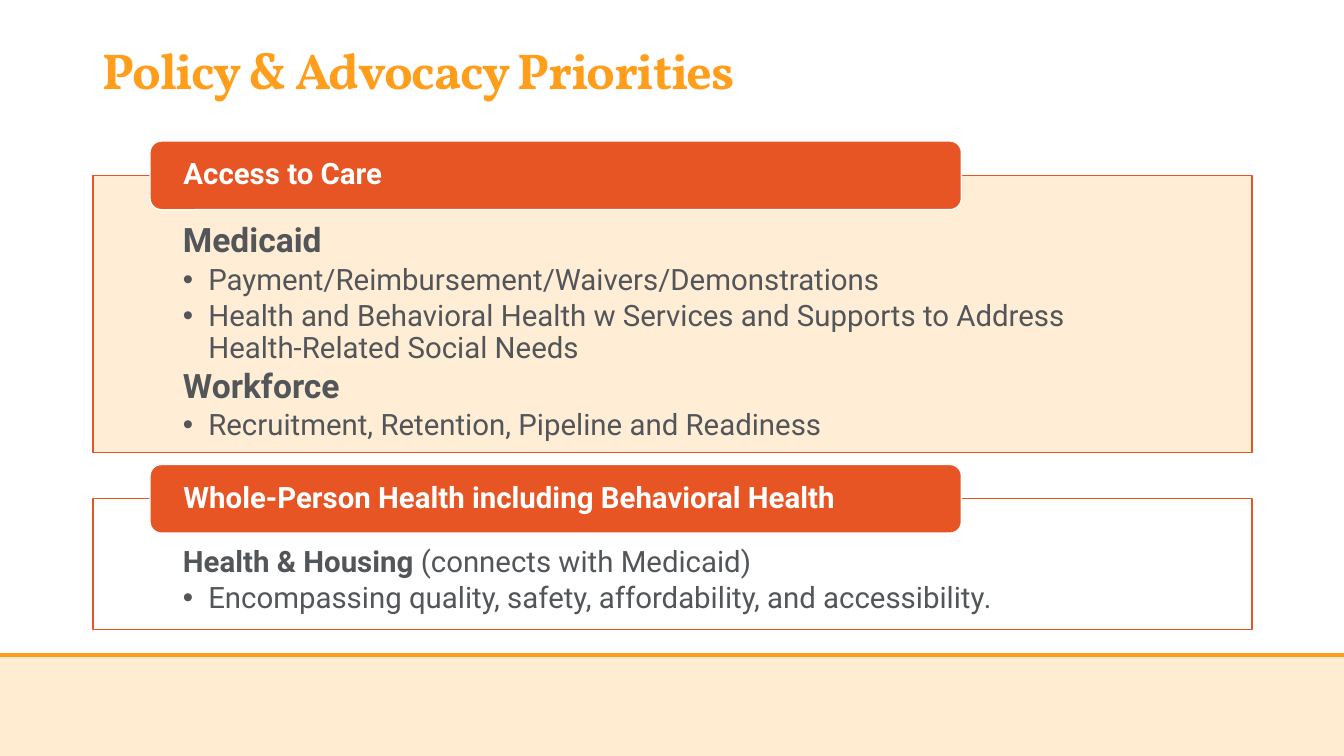
from dataclasses import dataclass

from lxml import etree
from pptx import Presentation
from pptx import util as u
from pptx.dml.color import RGBColor
from pptx.enum import shapes, text
from pptx.oxml.ns import qn

TITLE = "Policy & Advocacy Priorities"

# Each line: (level, [(text, bold, italic), ...])
PANELS = [
    {
        "heading": "Access to Care",
        "fill": "FFECD1",
        "height": 6.98,
        "lines": [
            ("head", [("Medicaid", True, False)]),
            ("bullet", [("Payment/Reimbursement/Waivers/Demonstrations", False, False)]),
            ("bullet", [("Health and Behavioral Health w Services and Supports to Address "
                         "Health-Related Social Needs", False, False)]),
            ("head", [("Workforce", True, False)]),
            ("bullet", [("Recruitment, Retention, Pipeline and Readiness", False, False)]),
        ],
    },
    {
        "heading": "Whole-Person Health including Behavioral Health",
        "fill": "FFFFFF",
        "height": 3.3,
        "lines": [
            ("plain", [("Health & Housing ", True, False),
                       ("(connects with Medicaid)", False, False)]),
            ("bullet", [("Encompassing quality, safety, affordability, and accessibility",
                         False, False), (".", False, True)]),
        ],
    },
]


@dataclass(frozen=True)
class Theme:
    amber: str = "FF9E1B"
    cream: str = "FFECD1"
    orange: str = "E75524"
    grey: str = "535659"
    white: str = "FFFFFF"
    title_font: str = "Vollkorn"
    body_font: str = "Roboto"
    title_size: int = 36
    head_size: int = 24
    body_size: int = 21


THEME = Theme()
SLIDE_WIDTH, SLIDE_HEIGHT = 33.87, 19.05
FOOTER_TOP = 16.51
PANEL_LEFT, PANEL_WIDTH, PANEL_TOP, PANEL_GAP = 2.34, 29.21, 4.42, 1.17
TAB_LEFT, TAB_WIDTH, TAB_HEIGHT = 3.78, 20.45, 1.73
TAB_RISE = TAB_HEIGHT / 2
HANGING_INDENT = 0.64


def add_text(paragraph, words, *, size, color, font=THEME.body_font, bold=False,
             italic=False, tracking=None):
    """Append a formatted run; tracking is in hundredths of a point."""
    run = paragraph.add_run()
    run.text = words
    run.font.name = font
    run.font.size = u.Pt(size)
    run.font.bold = bold
    run.font.italic = italic
    run.font.color.rgb = RGBColor.from_string(color)
    if tracking is not None:
        run.font._element.set("spc", str(tracking))


def add_box(slide, kind, left, top, width, height, fill, line=None, opacity=None):
    shape = slide.shapes.add_shape(kind, u.Cm(left), u.Cm(top), u.Cm(width), u.Cm(height))
    shape.shadow.inherit = False
    shape.fill.solid()
    shape.fill.fore_color.rgb = RGBColor.from_string(fill)
    if opacity:
        color = shape.fill._xPr.find(qn("a:solidFill"))[0]
        etree.SubElement(color, qn("a:alpha")).set("val", str(opacity * 1000))
    if line:
        shape.line.color.rgb = RGBColor.from_string(line)
        shape.line.width = u.Pt(1)
    else:
        shape.line.fill.background()
    return shape


def set_frame(shape, anchor, side, top=0, bottom=0):
    frame = shape.text_frame
    frame.word_wrap = True
    frame.vertical_anchor = anchor
    frame.margin_left = frame.margin_right = u.Cm(side)
    frame.margin_top, frame.margin_bottom = u.Cm(top), u.Cm(bottom)
    return frame


def set_paragraph(paragraph, bullet=False, space_after=0):
    if bullet:
        properties = paragraph._p.get_or_add_pPr()
        properties.set("marL", str(u.Cm(HANGING_INDENT)))
        properties.set("indent", str(-u.Cm(HANGING_INDENT)))
        etree.SubElement(properties, qn("a:buFont")).set("typeface", "Arial")
        etree.SubElement(properties, qn("a:buChar")).set("char", "•")
    paragraph.alignment = text.PP_ALIGN.LEFT
    paragraph.line_spacing = 0.9
    paragraph.space_after = u.Pt(space_after)


def add_footer(slide):
    add_box(slide, shapes.MSO_SHAPE.RECTANGLE, 0, FOOTER_TOP, SLIDE_WIDTH,
            SLIDE_HEIGHT - FOOTER_TOP, THEME.cream)
    rule = slide.shapes.add_connector(shapes.MSO_CONNECTOR.STRAIGHT, 0, u.Cm(FOOTER_TOP),
                                      u.Cm(SLIDE_WIDTH), u.Cm(FOOTER_TOP))
    rule.line.color.rgb = RGBColor.from_string(THEME.amber)
    rule.line.width = u.Pt(3)
    etree.SubElement(rule._element.spPr, qn("a:effectLst"))


def add_title(slide):
    title = slide.shapes.title
    title.left, title.top = u.Cm(PANEL_LEFT), 0
    title.width, title.height = u.Cm(PANEL_WIDTH), u.Cm(3.68)
    frame = set_frame(title, text.MSO_ANCHOR.MIDDLE, 0.25, 0.13, 0.13)
    frame.auto_size = text.MSO_AUTO_SIZE.NONE
    set_paragraph(frame.paragraphs[0])
    add_text(frame.paragraphs[0], TITLE, size=THEME.title_size, color=THEME.amber,
             font=THEME.title_font, bold=True, tracking=-90)


def add_panel(slide, panel, top):
    """Draw a bordered panel with its heading tab centred on the top edge."""
    body = add_box(slide, shapes.MSO_SHAPE.RECTANGLE, PANEL_LEFT, top, PANEL_WIDTH,
                   panel["height"], panel["fill"], THEME.orange, opacity=90)
    frame = set_frame(body, text.MSO_ANCHOR.TOP, 2.27, 1.22, 0.4)
    for index, (level, runs) in enumerate(panel["lines"]):
        paragraph = frame.add_paragraph() if index else frame.paragraphs[0]
        size = THEME.head_size if level == "head" else THEME.body_size
        set_paragraph(paragraph, level == "bullet", round(size * 0.15, 1))
        for words, bold, italic in runs:
            add_text(paragraph, words, size=size, color=THEME.grey, bold=bold, italic=italic)

    tab = add_box(slide, shapes.MSO_SHAPE.ROUNDED_RECTANGLE, TAB_LEFT, top - TAB_RISE,
                  TAB_WIDTH, TAB_HEIGHT, THEME.orange, THEME.white)
    heading = set_frame(tab, text.MSO_ANCHOR.MIDDLE, 0.76).paragraphs[0]
    set_paragraph(heading)
    add_text(heading, panel["heading"], size=THEME.body_size, color=THEME.white, bold=True)


def main():
    presentation = Presentation()
    presentation.slide_width = u.Cm(SLIDE_WIDTH)
    presentation.slide_height = u.Cm(SLIDE_HEIGHT)
    slide = presentation.slides.add_slide(presentation.slide_layouts[5])
    add_footer(slide)
    add_title(slide)
    top = PANEL_TOP
    for panel in PANELS:
        add_panel(slide, panel, top)
        top += panel["height"] + PANEL_GAP
    presentation.save("out.pptx")


if __name__ == "__main__":
    main()
